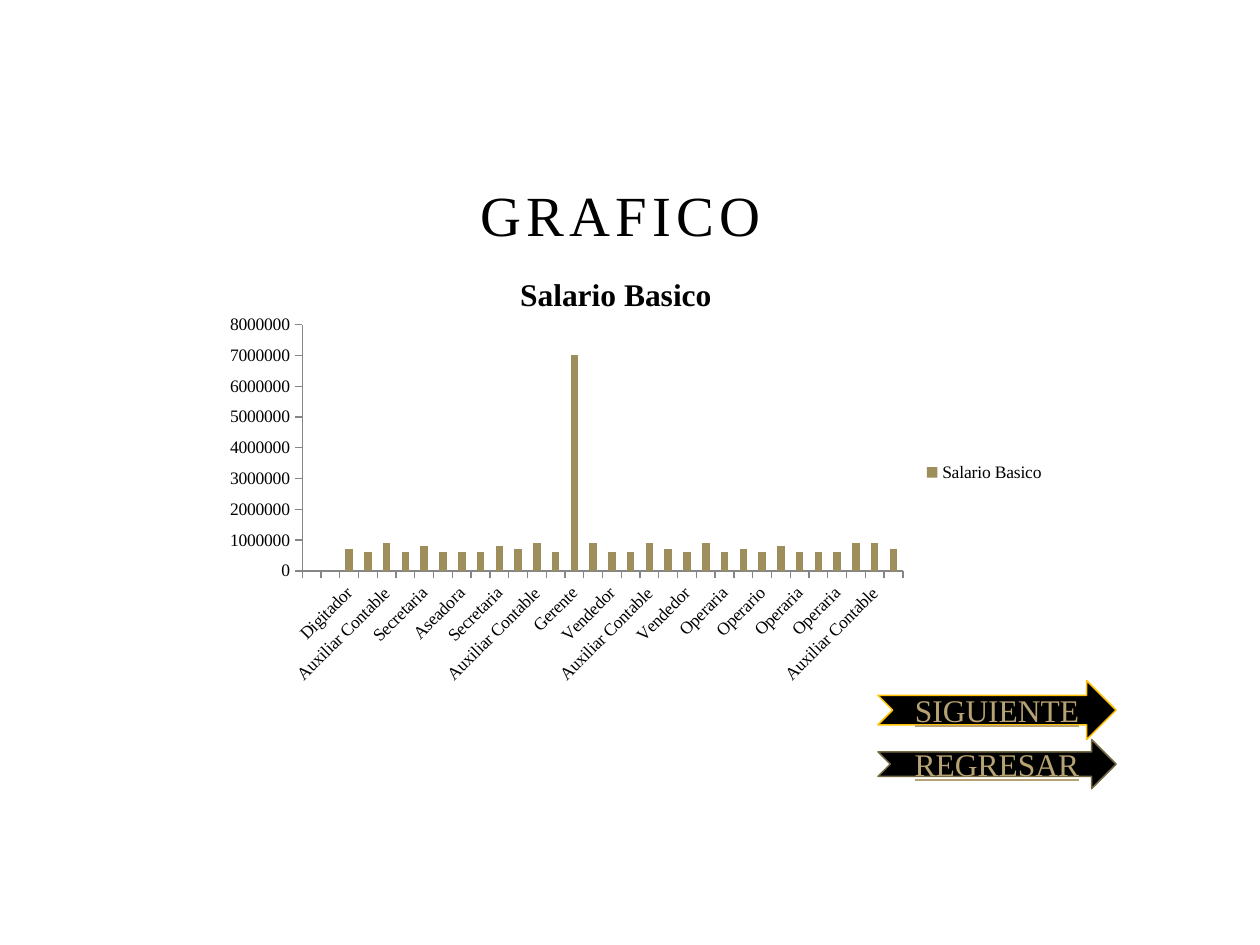
from lxml import etree
from pptx import Presentation
from pptx.chart.data import CategoryChartData
from pptx.dml.color import RGBColor
from pptx.enum.chart import XL_CHART_TYPE, XL_LEGEND_POSITION, XL_TICK_MARK
from pptx.enum.shapes import MSO_SHAPE
from pptx.enum.text import MSO_ANCHOR, MSO_AUTO_SIZE, PP_ALIGN
from pptx.oxml import parse_xml
from pptx.oxml.ns import nsdecls, qn
from pptx.util import Cm, Pt

FONT = "Times New Roman"
BLACK, GOLD, AXIS_GREY = "000000", "B6A272", "868686"
SERIES_NAME = "Salario Basico"

# Basic salary of each job, and the jobs in chart order
SALARIES = {
    "": None, "Digitador": 700000, "Digitadora": 700000, "Vendedor": 600000,
    "Auxiliar Contable": 900000, "Operario": 600000, "Operaria": 600000,
    "Secretaria": 800000, "Aseadora": 600000, "Gerente": 7000000,
}
JOBS = [
    "", "", "Digitador", "Vendedor", "Auxiliar Contable", "Operario",
    "Secretaria", "Vendedor", "Aseadora", "Vendedor", "Secretaria",
    "Digitador", "Auxiliar Contable", "Operaria", "Gerente",
    "Auxiliar Contable", "Vendedor", "Operaria", "Auxiliar Contable",
    "Digitador", "Vendedor", "Auxiliar Contable", "Operaria", "Digitadora",
    "Operario", "Secretaria", "Operaria", "Operaria", "Operaria",
    "Auxiliar Contable", "Auxiliar Contable", "Digitadora",
]


def color(hex_value):
    return RGBColor.from_string(hex_value)


def set_all(target, **values):
    for name, value in values.items():
        setattr(target, name, value)


def format_font(font, size, hex_value, **values):
    set_all(font, name=FONT, size=Pt(size), **values)
    font.color.rgb = color(hex_value)


def place(shape, box):
    for name, value in zip(("left", "top", "width", "height"), box):
        setattr(shape, name, Cm(value))


def write_line(frame, text, anchor):
    set_all(frame, vertical_anchor=anchor, auto_size=MSO_AUTO_SIZE.NONE)
    para = frame.paragraphs[0]
    para.alignment = PP_ALIGN.CENTER
    span = para.add_run()
    span.text = text
    return span


def add_title(page, box):
    title = page.shapes.title
    place(title, box)
    span = write_line(title.text_frame, "GRAFICO ", MSO_ANCHOR.BOTTOM)
    format_font(span.font, 32.4, BLACK)
    span.font._element.set("spc", "300")


def set_plot_layout(chart, x, y, w, h):
    """Fix the inner plot area, in fractions of the chart."""
    area = chart._chartSpace.chart.plotArea
    for old in area.findall(qn("c:layout")):
        area.remove(old)
    layout = parse_xml(f"<c:layout {nsdecls('c')}><c:manualLayout/></c:layout>")
    settings = {"layoutTarget": "inner", "xMode": "edge", "yMode": "edge",
                "x": x, "y": y, "w": w, "h": h}
    for name, value in settings.items():
        etree.SubElement(layout[0], qn(f"c:{name}")).set("val", str(value))
    area.insert(0, layout)


def add_salary_chart(page, box):
    data = CategoryChartData()
    data.categories = JOBS
    data.add_series(SERIES_NAME, [SALARIES[job] for job in JOBS])
    chart = page.shapes.add_chart(
        XL_CHART_TYPE.COLUMN_STACKED, *map(Cm, box), data).chart
    format_font(chart.font, 10, BLACK)

    # Title and legend
    chart.has_title = True
    heading = chart.chart_title
    heading.include_in_layout = False
    heading.text_frame.text = SERIES_NAME
    format_font(heading.text_frame.paragraphs[0].runs[0].font, 18, BLACK, bold=True)
    chart.has_legend = True
    set_all(chart.legend, position=XL_LEGEND_POSITION.RIGHT, include_in_layout=False)

    # Columns
    plot = chart.plots[0]
    set_all(plot, gap_width=150, overlap=100, vary_by_categories=False)
    fill = plot.series[0].format.fill
    fill.solid()
    fill.fore_color.rgb = color("9E8E5C")

    # Axes
    for axis in (chart.category_axis, chart.value_axis):
        set_all(axis, has_major_gridlines=False,
                major_tick_mark=XL_TICK_MARK.OUTSIDE,
                minor_tick_mark=XL_TICK_MARK.NONE)
        axis.format.line.color.rgb = color(AXIS_GREY)
        axis.format.line.width = Pt(0.75)
        format_font(axis.tick_labels.font, 10, BLACK)
    set_all(chart.value_axis, minimum_scale=0, maximum_scale=8000000,
            major_unit=1000000)
    label_body = chart.category_axis._element.find(qn("c:txPr")).find(qn("a:bodyPr"))
    label_body.set("rot", "-2700000")
    set_plot_layout(chart, 0.145, 0.161, 0.68, 0.565)


def add_arrow(page, box, text, line_color):
    arrow = page.shapes.add_shape(MSO_SHAPE.NOTCHED_RIGHT_ARROW, *map(Cm, box))
    arrow.shadow.inherit = False
    arrow.fill.solid()
    arrow.fill.fore_color.rgb = color(BLACK)
    arrow.line.color.rgb = color(line_color)
    arrow.line.width = Pt(0.85)
    span = write_line(arrow.text_frame, text, MSO_ANCHOR.MIDDLE)
    format_font(span.font, 18, GOLD, underline=True)


def add_navigation(page, box):
    left, top, width, height = box
    next_height = 1.19
    add_arrow(page, (left, top, width, next_height), "SIGUIENTE", "FFC000")
    add_arrow(page, (left, top + next_height, width, height - next_height),
              "REGRESAR", "756944")


def main():
    deck = Presentation()
    set_all(deck, slide_width=Cm(25.4), slide_height=Cm(19.05))
    page = deck.slides.add_slide(deck.slide_layouts[5])
    add_title(page, (3.81, 3.61, 17.78, 1.52))
    add_salary_chart(page, (3.51, 5.13, 17.81, 8.79))
    add_navigation(page, (17.7, 13.72, 4.8, 2.18))
    deck.save("out.pptx")


if __name__ == "__main__":
    main()
